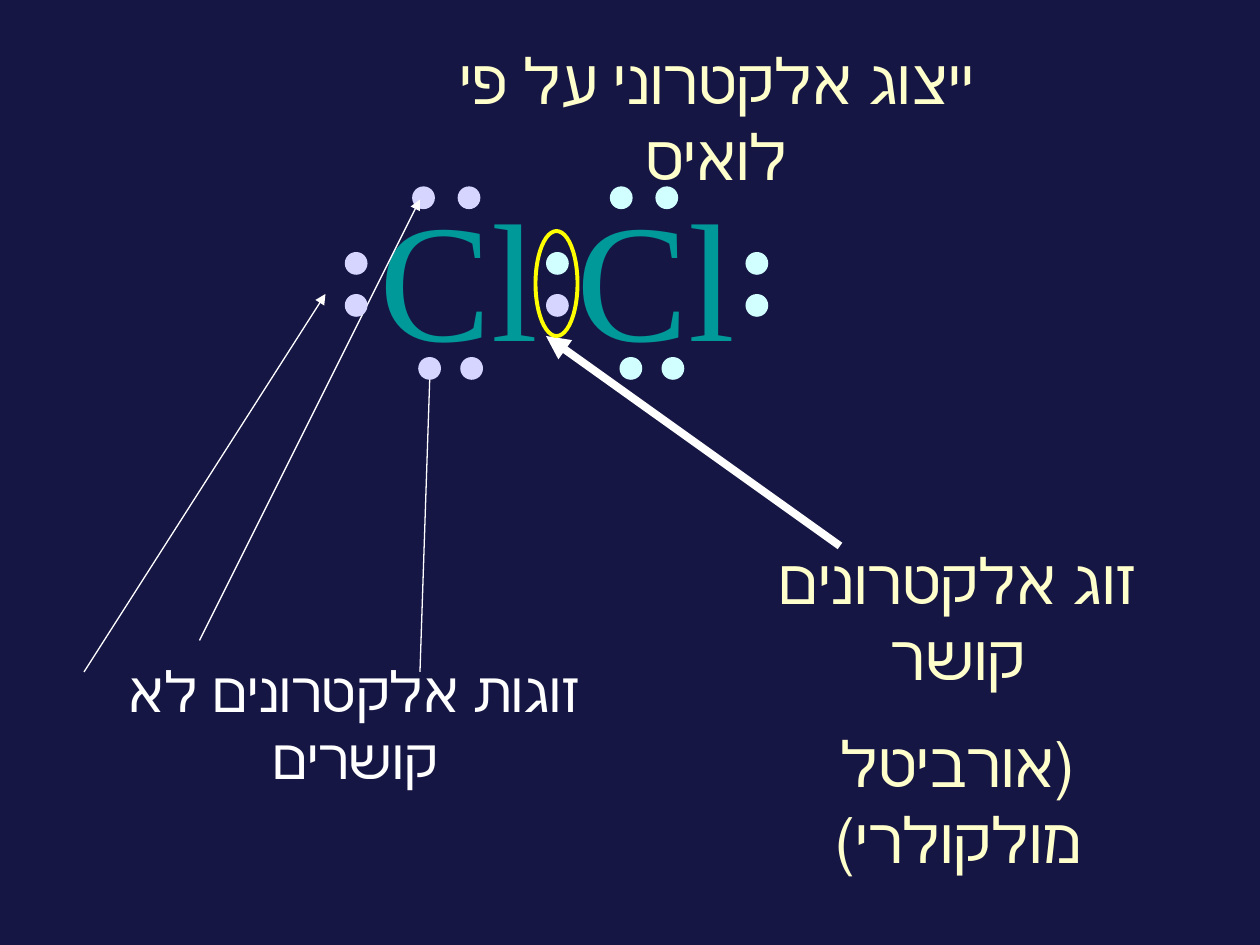
"""Build a slide showing the Lewis electron structure of a chlorine molecule."""
from typing import NamedTuple

from lxml.etree import SubElement
from pptx import Presentation
from pptx.dml.color import RGBColor as Color
from pptx.enum.shapes import MSO_CONNECTOR as Connector, MSO_SHAPE as Preset
from pptx.enum.text import MSO_AUTO_SIZE as AutoSize, PP_ALIGN as Align
from pptx.oxml.ns import qn
from pptx.util import Pt

COLORS = {
    "background": "161645",
    "heading": "FFFFCC",
    "symbol": "009999",
    "white": "FFFFFF",
    "left_electron": "D5D5FF",
    "right_electron": "D1FFFF",
    "bond": "FFFF00",
}
FONT = "Times New Roman"
DOT_SIZE = 13


class Label(NamedTuple):
    text: str
    box: tuple[float, float, float, float]
    size: float
    color: str
    wrap: bool = True


class Electron(NamedTuple):
    left: float
    top: float
    color: str


class Arrow(NamedTuple):
    start: tuple[float, float]
    end: tuple[float, float]
    width: float


LABELS = [
    Label("ייצוג אלקטרוני על פי לואיס", (218.2, 20.2, 382.3, 51), 36, "heading"),
    Label("Cl", (322.5, 95.8, 105, 122.4), 96, "symbol", wrap=False),
    Label("Cl", (209.5, 95.8, 105, 122.4), 96, "symbol", wrap=False),
    Label("זוגות אלקטרונים לא קושרים", (22.3, 371.5, 361.4, 46), 32, "white"),
    Label("זוג אלקטרונים קושר\n(אורביטל מולקולרי)", (400.3, 306, 294.5, 116.6), 36, "heading"),
]
TOP_LEFT_PAIR = [Electron(left, 106.5, "left_electron") for left in (235.5, 261.5)]
OTHER_ELECTRONS = [
    *(Electron(left, 106.5, "right_electron") for left in (348.5, 374.5)),
    *(Electron(left, 204, "left_electron") for left in (239, 263)),
    *(Electron(left, 204, "right_electron") for left in (354, 378)),
    *(Electron(197, top, "left_electron") for top in (144, 168)),
    *(Electron(426, top, "right_electron") for top in (144, 168)),
    Electron(312, 144, "right_electron"),
    Electron(312, 168, "left_electron"),
]
ARROWS = [
    Arrow((48, 384), (186, 168), 0.75),
    Arrow((114, 366), (240, 114), 0.75),
    Arrow((240, 384), (246, 204), 0.75),
    Arrow((480, 312), (312, 192), 4.5),
]


def rgb(name: str) -> Color:
    """Return the named colour."""
    return Color.from_string(COLORS[name])


def add_text(slide, text: str, *, box: tuple, size: float, color: str, wrap: bool) -> None:
    """Add a centred right-to-left text box with one paragraph per line."""
    frame = slide.shapes.add_textbox(*map(Pt, box)).text_frame
    frame.word_wrap = wrap
    frame.auto_size = AutoSize.SHAPE_TO_FIT_TEXT
    for index, line in enumerate(text.split("\n")):
        paragraph = frame.add_paragraph() if index else frame.paragraphs[0]
        paragraph.alignment = Align.CENTER
        paragraph.space_before = Pt(size / 2)
        paragraph._p.get_or_add_pPr().set("rtl", "1")
        run = paragraph.add_run()
        run.text = line
        run.font.name = FONT
        run.font.size = Pt(size)
        run.font.color.rgb = rgb(color)


def add_electron(slide, electron: Electron) -> None:
    """Add one electron dot."""
    shape = slide.shapes.add_shape(
        Preset.OVAL, Pt(electron.left), Pt(electron.top), Pt(DOT_SIZE), Pt(DOT_SIZE))
    shape.shadow.inherit = False
    shape.fill.solid()
    shape.fill.fore_color.rgb = rgb(electron.color)
    shape.line.fill.background()


def add_bond_ring(slide) -> None:
    """Add the ring around the shared pair."""
    shape = slide.shapes.add_shape(Preset.OVAL, Pt(306), Pt(132), Pt(24), Pt(60))
    shape.shadow.inherit = False
    shape.fill.background()
    shape.line.color.rgb = rgb("bond")
    shape.line.width = Pt(2.25)


def add_arrow(slide, arrow: Arrow) -> None:
    """Add a white straight arrow."""
    connector = slide.shapes.add_connector(
        Connector.STRAIGHT, *map(Pt, (*arrow.start, *arrow.end)))
    connector.line.color.rgb = rgb("white")
    connector.line.width = Pt(arrow.width)
    SubElement(connector.line._get_or_add_ln(), qn("a:tailEnd"), type="triangle")
    SubElement(connector._element.spPr, qn("a:effectLst"))


def main() -> None:
    """Build and save the presentation."""
    presentation = Presentation()
    presentation.slide_width, presentation.slide_height = Pt(720), Pt(540)
    slide = presentation.slides.add_slide(presentation.slide_layouts[6])
    slide.background.fill.solid()
    slide.background.fill.fore_color.rgb = rgb("background")
    for label in LABELS:
        add_text(slide, label.text, box=label.box, size=label.size,
                 color=label.color, wrap=label.wrap)
    for electron in TOP_LEFT_PAIR:
        add_electron(slide, electron)
    for arrow in ARROWS:
        add_arrow(slide, arrow)
    for electron in OTHER_ELECTRONS:
        add_electron(slide, electron)
    add_bond_ring(slide)
    presentation.save("out.pptx")


if __name__ == "__main__":
    main()
